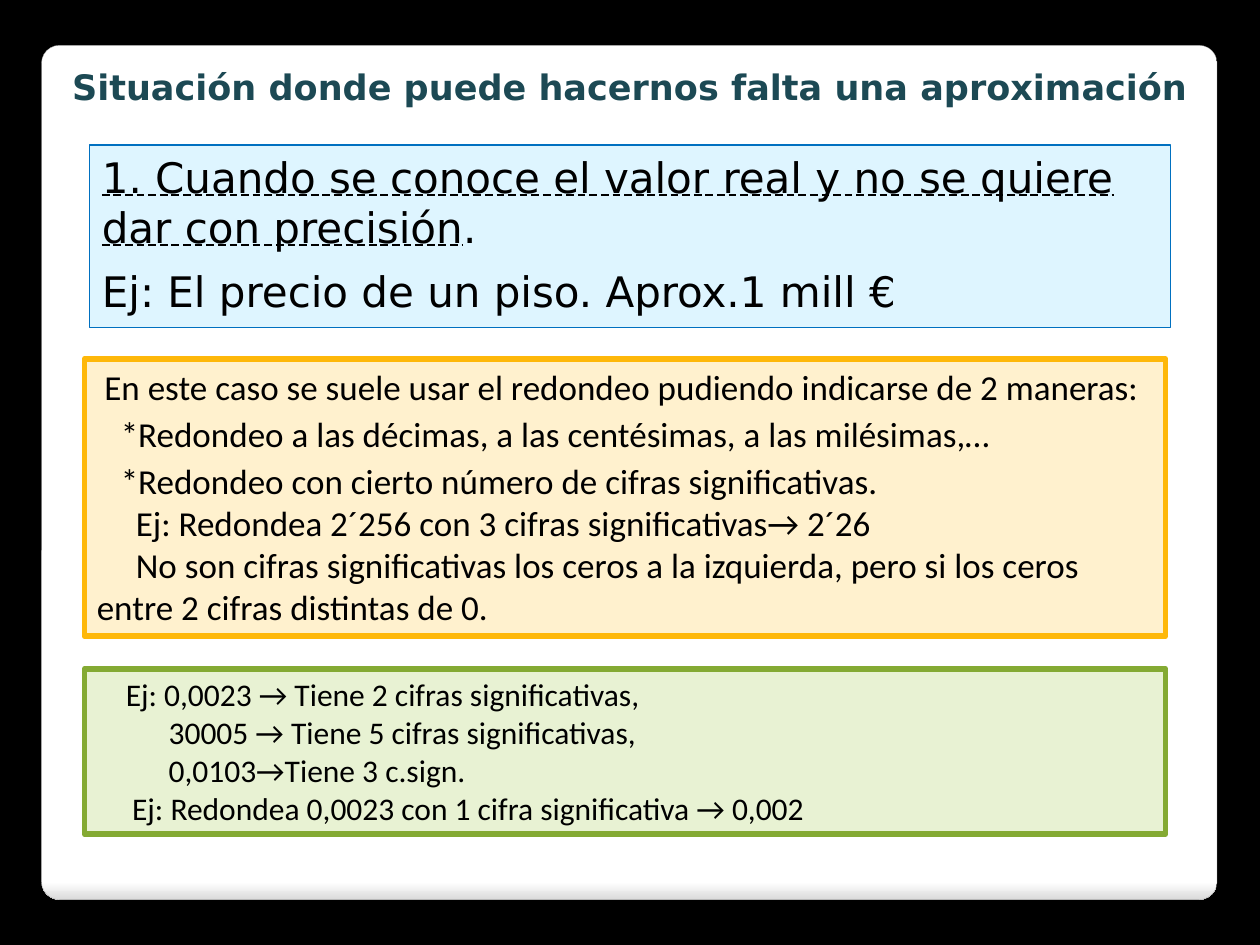
from dataclasses import dataclass

from pptx import Presentation
from pptx.dml.color import RGBColor
from pptx.enum.shapes import MSO_SHAPE
from pptx.enum.text import MSO_ANCHOR, MSO_UNDERLINE, PP_ALIGN
from pptx.util import Inches, Pt

RECT, ROUND = MSO_SHAPE.RECTANGLE, MSO_SHAPE.ROUNDED_RECTANGLE
TOP, LEFT, CENTER = MSO_ANCHOR.TOP, PP_ALIGN.LEFT, PP_ALIGN.CENTER
DASH = MSO_UNDERLINE.DASH_LINE
SANS, BODY = "DejaVu Sans", "Calibri"
COLORS = {
    "black": "000000", "white": "FFFFFF", "shade": "DADADA", "edge": "A4A4A4",
    "title": "1C4954", "sky": "DEF5FF", "blue": "0070C0", "cream": "FFF1CE",
    "amber": "FEB80A", "mint": "E8F2D3", "green": "84AA33",
}


@dataclass
class Line:
    runs: list[str]
    indent: float = 0
    before: float = 0
    after: float = 0
    under: bool = False  # underlines the first run


@dataclass
class Box:
    at: tuple[float, float, float, float]
    fill: str
    edge: str
    width: float
    font: str
    size: float
    lines: list[Line]


BOXES = [
    Box((0.71, 1.15, 8.58, 1.45), "sky", "blue", 0.75, SANS, 24, [
        Line(["1. Cuando se conoce el valor real y no se quiere dar con precisión", "."],
             under=True),
        Line(["Ej: El precio de un piso. Aprox.1 mill €"], before=7.5),
    ]),
    Box((0.67, 2.85, 8.58, 2.2), "cream", "amber", 3.35, BODY, 20, [
        Line(["En este caso se suele usar el redondeo pudiendo indicarse de 2 maneras:"],
             0.06, after=3),
        Line(["*Redondeo a las décimas, a las centésimas, a las milésimas,…"], 0.19, after=3),
        Line(["*Redondeo con cierto número de cifras significativas."], 0.19),
        Line(["Ej: Redondea 2´256 con 3 cifras significativas→ 2´26"], 0.31),
        Line(["No son cifras significativas los ceros a la izquierda, pero si los ceros "
              "entre 2 cifras distintas de 0."], 0.31),
    ]),
    Box((0.67, 5.31, 8.58, 1.31), "mint", "green", 3.35, BODY, 18, [
        Line(["Ej: 0,0023 → Tiene 2 cifras significativas,"], 0.23),
        Line(["30005 → Tiene 5 cifras significativas,"], 0.57),
        Line(["0,0103→Tiene 3 c.sign."], 0.57),
        Line(["Ej: Redondea 0,0023 con 1 cifra significativa → 0,002"], 0.28, after=3),
    ]),
]


def color(name: str) -> RGBColor:
    return RGBColor.from_string(COLORS[name])


def add_shape(slide, kind, at: tuple, edge: str, width: float):
    shape = slide.shapes.add_shape(kind, *map(Inches, at))
    shape.shadow.inherit = False
    shape.line.color.rgb = color(edge)
    shape.line.width = Pt(width)
    return shape


def set_font(para, name: str, size: float, tint: str, bold: bool = False) -> None:
    font = para.font
    font.name, font.size, font.bold = name, Pt(size), bold
    font.color.rgb = color(tint)


def add_panel(slide) -> None:
    panel = add_shape(slide, ROUND, (0.33, 0.36, 9.33, 6.78), "edge", 0.16)
    panel.adjustments[0] = 0.021
    panel.fill.gradient()
    panel.fill.gradient_angle = 270
    for stop, name, place in zip(panel.fill.gradient_stops, ("white", "shade"), (0.98, 1)):
        stop.color.rgb = color(name)
        stop.position = place
    # Send behind the title
    slide.shapes.title._element.addprevious(panel._element)


def set_title(slide, text: str) -> None:
    title = slide.shapes.title
    title.left, title.top, title.width, title.height = map(Inches, (0.39, 0.47, 9.22, 0.44))
    frame = title.text_frame
    frame.text = text
    frame.word_wrap = True
    frame.vertical_anchor = TOP
    para = frame.paragraphs[0]
    para.alignment = CENTER
    set_font(para, SANS, 20, "title", True)


def add_box(slide, box: Box) -> None:
    shape = add_shape(slide, RECT, box.at, box.edge, box.width)
    shape.fill.solid()
    shape.fill.fore_color.rgb = color(box.fill)
    frame = shape.text_frame
    frame.word_wrap = True
    frame.vertical_anchor = TOP
    for i, line in enumerate(box.lines):
        para = frame.add_paragraph() if i else frame.paragraphs[0]
        para.alignment = LEFT
        para.space_before, para.space_after = Pt(line.before), Pt(line.after)
        set_font(para, box.font, box.size, "black")
        # First-line indent only, so wrapped text returns to the margin
        props = para._p.get_or_add_pPr()
        props.set("marL", "0")
        props.set("indent", str(Inches(line.indent)))
        for text in line.runs:
            para.add_run().text = text
        if line.under:
            para.runs[0].font.underline = DASH


def main() -> None:
    deck = Presentation()
    deck.slide_width, deck.slide_height = Inches(10), Inches(7.5)
    slide = deck.slides.add_slide(deck.slide_layouts[5])

    # Backdrop and title
    slide.background.fill.solid()
    slide.background.fill.fore_color.rgb = color("black")
    add_panel(slide)
    set_title(slide, "Situación donde puede hacernos falta una aproximación")

    # Text boxes
    for box in BOXES:
        add_box(slide, box)
    deck.save("out.pptx")


if __name__ == "__main__":
    main()
